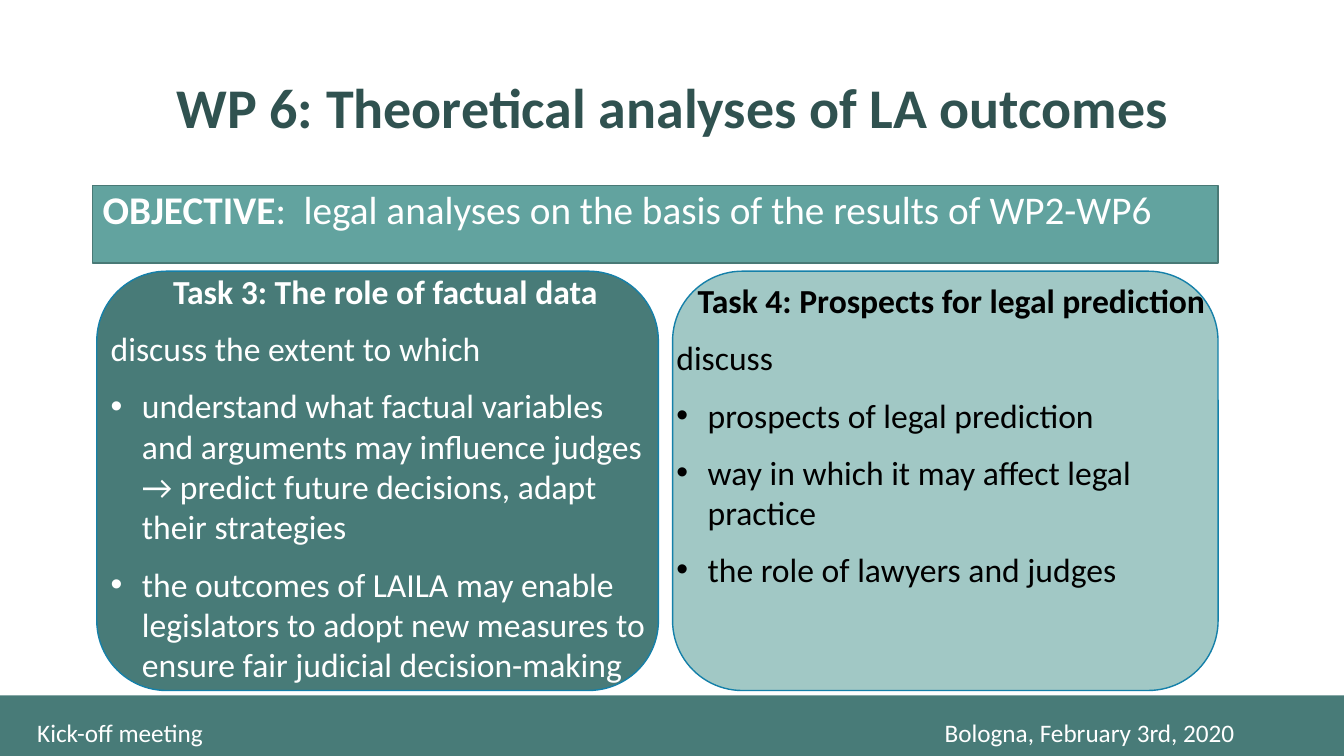
from dataclasses import dataclass

from lxml.etree import SubElement
from pptx import Presentation
from pptx.dml.color import RGBColor
from pptx.enum.shapes import MSO_SHAPE as Shape
from pptx.enum.text import MSO_ANCHOR as Anchor
from pptx.enum.text import MSO_AUTO_SIZE as AutoSize
from pptx.enum.text import PP_ALIGN as Align
from pptx.oxml.ns import qn
from pptx.util import Inches, Pt


@dataclass(frozen=True)
class Theme:
    font: str = "Calibri"
    white: str = "FFFFFF"
    black: str = "000000"
    title_ink: str = "305250"
    dark: str = "487B78"
    medium: str = "62A39F"
    light: str = "A1C8C5"
    card_line: str = "1580A9"
    banner_line: str = "497976"
    title_size: int = 40
    banner_size: int = 28
    body_size: int = 24
    footer_size: int = 18


THEME = Theme()
WIDTH, HEIGHT = Inches(13.33), Inches(7.5)
INDENT = Inches(0.31)
DATE_TAB = Inches(9)

# Left, top, width, height as percentages of the slide
BAR = (0, 92, 100, 8)
FOOTER = (2.03, 94.27, 97.97, 5.33)
TITLE = (6.9, 8.67, 86.27, 11.73)
BANNER = (6.9, 24.53, 83.72, 10.27)

TASKS = [
    dict(
        card=(7.2, 35.87, 41.79, 55.47), text=(7.5, 35.2, 41.79, 56.53),
        fill=THEME.dark, ink=THEME.white,
        heading=" Task 3: The role of factual data",
        lead="discuss the extent to which",
        points=[
            "understand what factual variables and arguments may influence "
            "judges → predict future decisions, adapt their strategies",
            "the outcomes of LAILA may enable legislators to adopt new "
            "measures to ensure fair judicial decision-making",
        ],
    ),
    dict(
        card=(50.04, 35.87, 40.59, 55.47), text=(49.59, 36.4, 41.86, 42.67),
        fill=THEME.light, ink=THEME.black,
        heading=" Task 4: Prospects for legal prediction",
        lead="discuss",
        points=[
            "prospects of legal prediction",
            "way in which it may affect legal practice",
            "the role of lawyers and judges",
        ],
    ),
]


def place(area):
    left, top, width, height = area
    return [round(share * full / 100) for share, full in
            ((left, WIDTH), (top, HEIGHT), (width, WIDTH), (height, HEIGHT))]


def add_panel(slide, kind, area, fill, line=None):
    panel = slide.shapes.add_shape(kind, *place(area))
    panel.shadow.inherit = False
    panel.fill.solid()
    panel.fill.fore_color.rgb = RGBColor.from_string(fill)
    if line:
        panel.line.color.rgb = RGBColor.from_string(line)
        panel.line.width = Pt(1)
    else:
        panel.line.fill.background()
    return panel


def add_text_frame(slide, area, grow=True):
    frame = slide.shapes.add_textbox(*place(area)).text_frame
    frame.word_wrap = True
    frame.auto_size = AutoSize.SHAPE_TO_FIT_TEXT if grow else AutoSize.NONE
    return frame


def style(para, size, color, bold=None, align=Align.LEFT):
    para.alignment = align
    para.font.name = THEME.font
    para.font.size = Pt(size)
    para.font.bold = bold
    para.font.color.rgb = RGBColor.from_string(color)


def add_bullet(para):
    props = para._p.get_or_add_pPr()
    props.set("marL", str(INDENT))
    props.set("indent", str(-INDENT))
    SubElement(props, qn("a:buFont"), typeface="Arial")
    SubElement(props, qn("a:buChar"), char="•")


def add_tab_stop(para, position):
    tabs = SubElement(para._p.get_or_add_pPr(), qn("a:tabLst"))
    SubElement(tabs, qn("a:tab"), pos=str(position), algn="l")


def add_footer(slide):
    add_panel(slide, Shape.RECTANGLE, BAR, THEME.dark)
    para = add_text_frame(slide, FOOTER).paragraphs[0]
    para.add_run().text = "Kick-off meeting\tBologna, February 3rd, 2020"
    add_tab_stop(para, DATE_TAB)
    style(para, THEME.footer_size, THEME.white)


def add_title(slide, text):
    frame = add_text_frame(slide, TITLE, grow=False)
    frame.vertical_anchor = Anchor.MIDDLE
    para = frame.paragraphs[0]
    para.add_run().text = text
    para.line_spacing = 0.9
    style(para, THEME.title_size, THEME.title_ink, True, Align.CENTER)


def add_banner(slide, label, text):
    panel = add_panel(slide, Shape.RECTANGLE, BANNER, THEME.medium,
                      THEME.banner_line)
    frame = panel.text_frame
    frame.word_wrap = True
    frame.vertical_anchor = Anchor.TOP
    para = frame.paragraphs[0]
    for words, bold in ((label, True), (text, False)):
        span = para.add_run()
        span.text = words
        span.font.bold = bold
    para.line_spacing = 0.9
    para.space_before = Pt(10)
    style(para, THEME.banner_size, THEME.white)


def add_task_text(slide, task):
    frame = add_text_frame(slide, task["text"])
    lines = [task["heading"], task["lead"], *task["points"]]
    for index, line in enumerate(lines):
        para = frame.add_paragraph() if index else frame.paragraphs[0]
        para.add_run().text = line
        para.space_before = para.space_after = Pt(6)
        if index > 1:
            add_bullet(para)
        is_heading = index == 0
        style(para, THEME.body_size, task["ink"], is_heading,
              Align.CENTER if is_heading else Align.LEFT)


def main():
    deck = Presentation()
    deck.slide_width, deck.slide_height = WIDTH, HEIGHT
    slide = deck.slides.add_slide(deck.slide_layouts[6])

    # Footer band
    add_footer(slide)

    # Task cards, then their text on top
    for task in TASKS:
        add_panel(slide, Shape.ROUNDED_RECTANGLE, task["card"], task["fill"],
                  THEME.card_line)
    for task in TASKS:
        add_task_text(slide, task)

    # Title and objective
    add_title(slide, "WP 6: Theoretical analyses of LA outcomes")
    add_banner(slide, "OBJECTIVE",
               ":  legal analyses on the basis of the results of WP2-WP6")

    deck.save("out.pptx")


if __name__ == "__main__":
    main()
